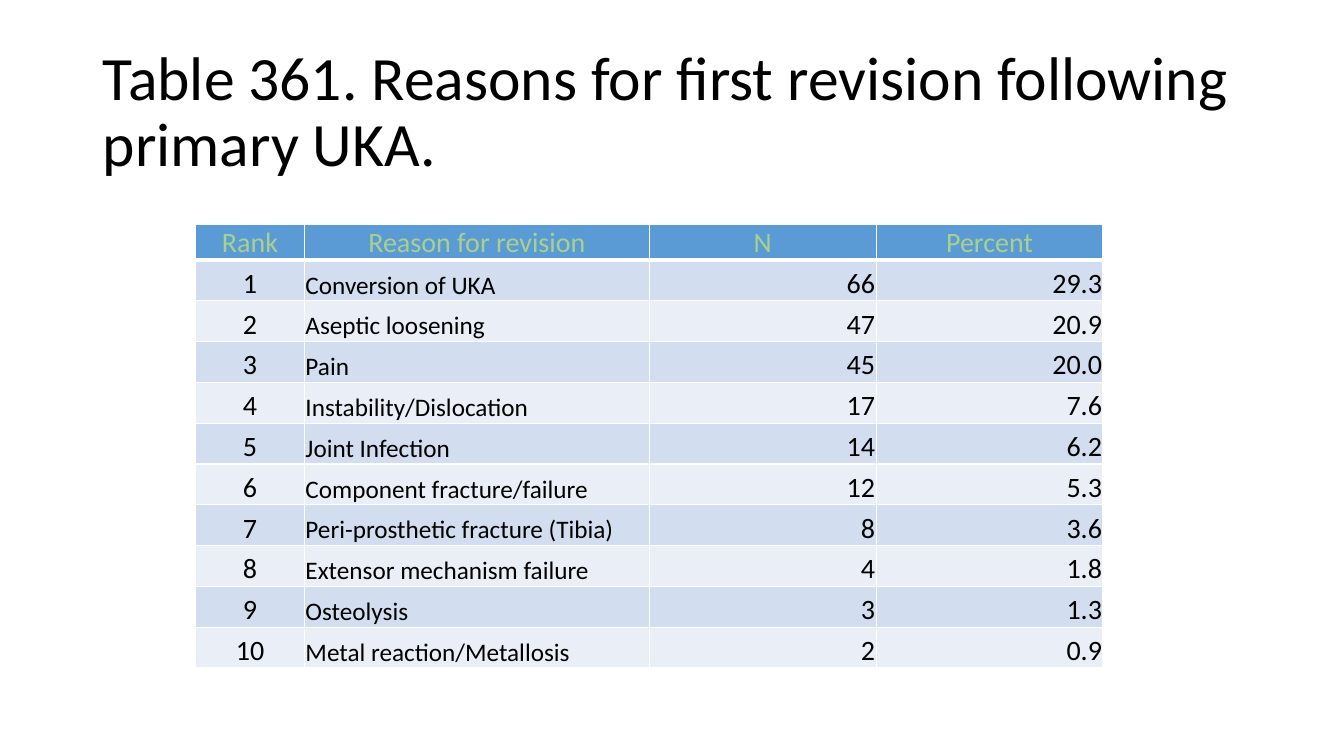
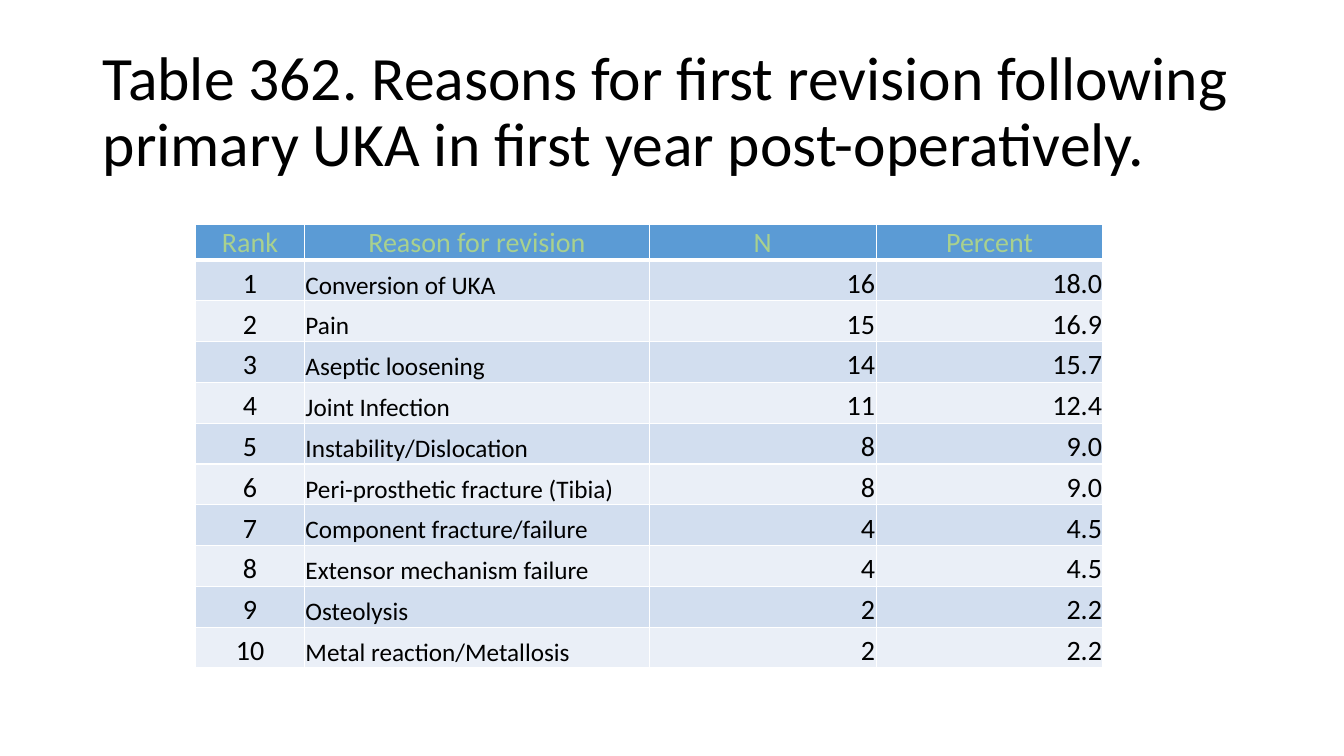
from dataclasses import dataclass

from lxml import etree
from pptx import Presentation
from pptx.dml.color import RGBColor
from pptx.enum.text import MSO_ANCHOR, MSO_AUTO_SIZE, PP_ALIGN
from pptx.oxml.ns import qn
from pptx.util import Inches, Pt

LEFT, CENTER, RIGHT = PP_ALIGN.LEFT, PP_ALIGN.CENTER, PP_ALIGN.RIGHT
MIDDLE, BOTTOM = MSO_ANCHOR.MIDDLE, MSO_ANCHOR.BOTTOM
NO_AUTOFIT = MSO_AUTO_SIZE.NONE


@dataclass(frozen=True)
class Theme:
    font: str = "Calibri"
    text: str = "000000"
    header_text: str = "A9D18E"
    header_fill: str = "5B9BD5"
    bands: tuple = ("D2DEEF", "EAEFF7")
    rule: str = "FFFFFF"
    thin: float = 1
    thick: float = 3
    title_size: float = 44
    table_size: float = 20
    reason_size: float = 18


THEME = Theme()
TITLE_ONLY = 5
TITLE_BOX = (0.92, 0.4, 11.5, 1.45)
TABLE_BOX = (1.94, 2.23, 9, 4.4)
HEADER_HEIGHT = 0.35
COLUMN_SHARES = (0.12, 0.38, 0.25, 0.25)
COLUMN_ALIGNS = (CENTER, LEFT, RIGHT, RIGHT)
COLUMN_SIZES = (THEME.table_size, THEME.reason_size, THEME.table_size, THEME.table_size)
HEADINGS = ("Rank", "Reason for revision", "N", "Percent")

REVISION_TABLES = (
    ("Table 361. Reasons for first revision following primary UKA.", (
        ("Conversion of UKA", "66", "29.3"),
        ("Aseptic loosening", "47", "20.9"),
        ("Pain", "45", "20.0"),
        ("Instability/Dislocation", "17", "7.6"),
        ("Joint Infection", "14", "6.2"),
        ("Component fracture/failure", "12", "5.3"),
        ("Peri-prosthetic fracture (Tibia)", "8", "3.6"),
        ("Extensor mechanism failure", "4", "1.8"),
        ("Osteolysis", "3", "1.3"),
        ("Metal reaction/Metallosis", "2", "0.9"),
    )),
    ("Table 362. Reasons for first revision following\n"
     "primary UKA in first year post-operatively.", (
        ("Conversion of UKA", "16", "18.0"),
        ("Pain", "15", "16.9"),
        ("Aseptic loosening", "14", "15.7"),
        ("Joint Infection", "11", "12.4"),
        ("Instability/Dislocation", "8", "9.0"),
        ("Peri-prosthetic fracture (Tibia)", "8", "9.0"),
        ("Component fracture/failure", "4", "4.5"),
        ("Extensor mechanism failure", "4", "4.5"),
        ("Osteolysis", "2", "2.2"),
        ("Metal reaction/Metallosis", "2", "2.2"),
    )),
)


def write(frame, text, *, size, color=THEME.text, align=LEFT, spacing=None):
    """Fill the frame with one paragraph; a newline becomes a line break."""
    paragraph = frame.paragraphs[0]
    paragraph.alignment = align
    paragraph.line_spacing = spacing
    for index, line in enumerate(text.split("\n")):
        if index:
            paragraph.add_line_break()
        run = paragraph.add_run()
        run.text = line
        run.font.name = THEME.font
        run.font.size = Pt(size)
        run.font.bold = False
        run.font.color.rgb = RGBColor.from_string(color)


def set_borders(cell, top, bottom):
    """Rule all four sides; top and bottom are widths in points."""
    properties = cell._tc.get_or_add_tcPr()
    widths = {"a:lnL": THEME.thin, "a:lnR": THEME.thin, "a:lnT": top, "a:lnB": bottom}
    for position, (tag, width) in enumerate(widths.items()):
        line = etree.Element(qn(tag), w=str(Pt(width)))
        fill = etree.SubElement(line, qn("a:solidFill"))
        etree.SubElement(fill, qn("a:srgbClr"), val=THEME.rule)
        properties.insert(position, line)


def fill_cell(cell, text, fill, *, top=THEME.thin, bottom=THEME.thin, **text_format):
    cell.fill.solid()
    cell.fill.fore_color.rgb = RGBColor.from_string(fill)
    cell.vertical_anchor = BOTTOM
    cell.margin_left = cell.margin_right = cell.margin_top = Inches(0.01)
    cell.margin_bottom = 0
    set_borders(cell, top, bottom)
    write(cell.text_frame, text, **text_format)


def add_reasons_table(slide, box, reasons):
    left, top, width, height = box
    table = slide.shapes.add_table(
        len(reasons) + 1, len(HEADINGS), *(Inches(v) for v in box)).table
    for column, share in zip(table.columns, COLUMN_SHARES):
        column.width = Inches(width * share)
    for row in table.rows:
        row.height = Inches((height - HEADER_HEIGHT) / len(reasons))
    table.rows[0].height = Inches(HEADER_HEIGHT)

    for column, heading in enumerate(HEADINGS):
        fill_cell(table.cell(0, column), heading, THEME.header_fill, bottom=THEME.thick,
                  size=THEME.table_size, color=THEME.header_text, align=CENTER)
    for rank, reason in enumerate(reasons, 1):
        band = THEME.bands[(rank - 1) % 2]
        rule = THEME.thick if rank == 1 else THEME.thin
        for column, value in enumerate((str(rank), *reason)):
            fill_cell(table.cell(rank, column), value, band, top=rule,
                      size=COLUMN_SIZES[column], align=COLUMN_ALIGNS[column])


def set_title_style(layout, box):
    """Place the title once on the layout, so that every slide inherits it."""
    title = layout.placeholders[0]
    title.left, title.top, title.width, title.height = (Inches(v) for v in box)
    title.text_frame.vertical_anchor = MIDDLE
    title.text_frame.auto_size = NO_AUTOFIT


def add_table_slide(deck, layout, title, reasons):
    slide = deck.slides.add_slide(layout)
    write(slide.shapes.title.text_frame, title, size=THEME.title_size, spacing=0.9)
    add_reasons_table(slide, TABLE_BOX, reasons)


def main():
    deck = Presentation()
    deck.slide_width, deck.slide_height = Inches(13.33), Inches(7.5)
    layout = deck.slide_layouts[TITLE_ONLY]
    set_title_style(layout, TITLE_BOX)
    for title, reasons in REVISION_TABLES:
        add_table_slide(deck, layout, title, reasons)
    deck.save("out.pptx")


if __name__ == "__main__":
    main()
